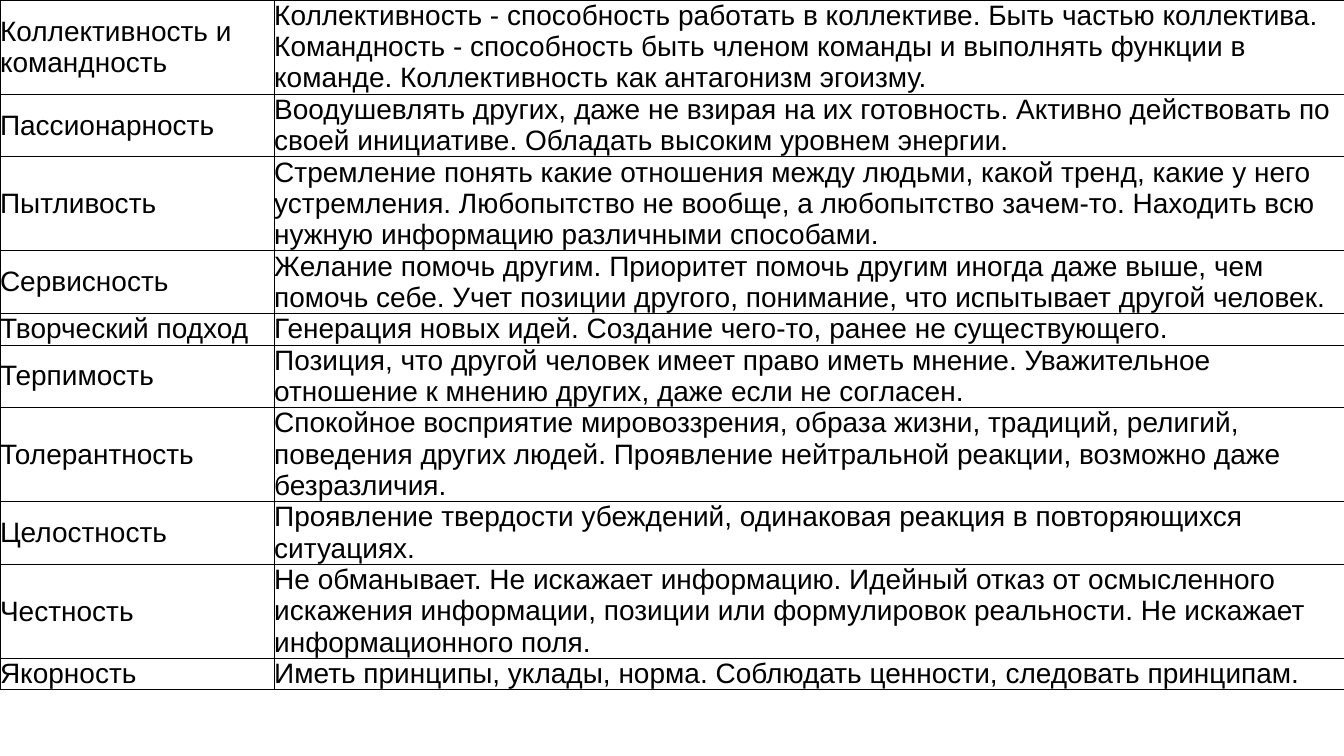
import dataclasses

import lxml.etree
import pptx
import pptx.dml.color
import pptx.enum.text
import pptx.oxml.ns
import pptx.table
import pptx.util

COLOURS = {"text": "000000", "border": "000000"}
COLUMN_WIDTHS = (6.91, 26.97)
LINE_HEIGHT = 0.79
CELL_FORMAT = {
    "margin_left": 0,
    "margin_right": 0,
    "margin_top": 0,
    "margin_bottom": 0,
}
FONT_FORMAT = {"name": "Arial", "size": pptx.util.Pt(20), "bold": False}


@dataclasses.dataclass(frozen=True)
class Quality:
    name: str
    meaning: str
    lines: int


QUALITIES = (
    Quality(
        "Коллективность и командность",
        "Коллективность - способность работать в коллективе. Быть частью коллектива. "
        "Командность - способность быть членом команды и выполнять функции в команде. "
        "Коллективность как антагонизм эгоизму.",
        3,
    ),
    Quality(
        "Пассионарность",
        "Воодушевлять других, даже не взирая на их готовность. Активно действовать по "
        "своей инициативе. Обладать высоким уровнем энергии.",
        2,
    ),
    Quality(
        "Пытливость",
        "Стремление понять какие отношения между людьми, какой тренд, какие у него "
        "устремления. Любопытство не вообще, а любопытство зачем-то. Находить всю "
        "нужную информацию различными способами.",
        3,
    ),
    Quality(
        "Сервисность",
        "Желание помочь другим. Приоритет помочь другим иногда даже выше, чем помочь "
        "себе. Учет позиции другого, понимание, что испытывает другой человек.",
        2,
    ),
    Quality(
        "Творческий подход",
        "Генерация новых идей. Создание чего-то, ранее не существующего.",
        1,
    ),
    Quality(
        "Терпимость",
        "Позиция, что другой человек имеет право иметь мнение. Уважительное отношение "
        "к мнению других, даже если не согласен.",
        2,
    ),
    Quality(
        "Толерантность",
        "Спокойное восприятие мировоззрения, образа жизни, традиций, религий, поведения "
        "других людей. Проявление нейтральной реакции, возможно даже безразличия.",
        3,
    ),
    Quality(
        "Целостность",
        "Проявление твердости убеждений, одинаковая реакция в повторяющихся ситуациях.",
        2,
    ),
    Quality(
        "Честность",
        "Не обманывает. Не искажает информацию. Идейный отказ от осмысленного искажения "
        "информации, позиции или формулировок реальности. Не искажает информационного "
        "поля.",
        3,
    ),
    Quality(
        "Якорность",
        "Иметь принципы, уклады, норма. Соблюдать ценности, следовать принципам.",
        1,
    ),
)


def apply_format(target: object, values: dict) -> None:
    """Set every attribute named in the format values."""
    for name, value in values.items():
        setattr(target, name, value)


def add_borders(cell: pptx.table._Cell) -> None:
    """Draw a thin line on all four sides of a cell."""
    qualified = pptx.oxml.ns.qn
    properties = cell._tc.get_or_add_tcPr()
    for position, side in enumerate(("a:lnL", "a:lnR", "a:lnT", "a:lnB")):
        line = lxml.etree.Element(qualified(side), w=str(pptx.util.Pt(0.5)))
        fill = lxml.etree.SubElement(line, qualified("a:solidFill"))
        lxml.etree.SubElement(fill, qualified("a:srgbClr"), val=COLOURS["border"])
        properties.insert(position, line)


def fill_cell(
    cell: pptx.table._Cell, text: str, anchor: pptx.enum.text.MSO_ANCHOR
) -> None:
    """Write and format one cell."""
    apply_format(cell, {**CELL_FORMAT, "text": text, "vertical_anchor": anchor})
    cell.fill.background()
    font = cell.text_frame.paragraphs[0].runs[0].font
    apply_format(font, FONT_FORMAT)
    font.color.rgb = pptx.dml.color.RGBColor.from_string(COLOURS["text"])
    add_borders(cell)


def main() -> None:
    """Build the table of personal qualities and save it."""
    presentation = pptx.Presentation()
    presentation.slide_width = pptx.util.Cm(33.87)
    presentation.slide_height = pptx.util.Cm(19.05)
    slide = presentation.slides.add_slide(presentation.slide_layouts[6])
    height = LINE_HEIGHT * sum(quality.lines for quality in QUALITIES)
    table = slide.shapes.add_table(
        len(QUALITIES),
        len(COLUMN_WIDTHS),
        0,
        0,
        pptx.util.Cm(sum(COLUMN_WIDTHS)),
        pptx.util.Cm(height),
    ).table
    apply_format(table, {"first_row": False, "horz_banding": False})
    for column, width in zip(table.columns, COLUMN_WIDTHS):
        column.width = pptx.util.Cm(width)
    for row, quality in zip(table.rows, QUALITIES):
        row.height = pptx.util.Cm(LINE_HEIGHT * quality.lines)
        name_cell, meaning_cell = row.cells
        fill_cell(name_cell, quality.name, pptx.enum.text.MSO_ANCHOR.MIDDLE)
        fill_cell(meaning_cell, quality.meaning, pptx.enum.text.MSO_ANCHOR.TOP)
    presentation.save("out.pptx")


if __name__ == "__main__":
    main()
